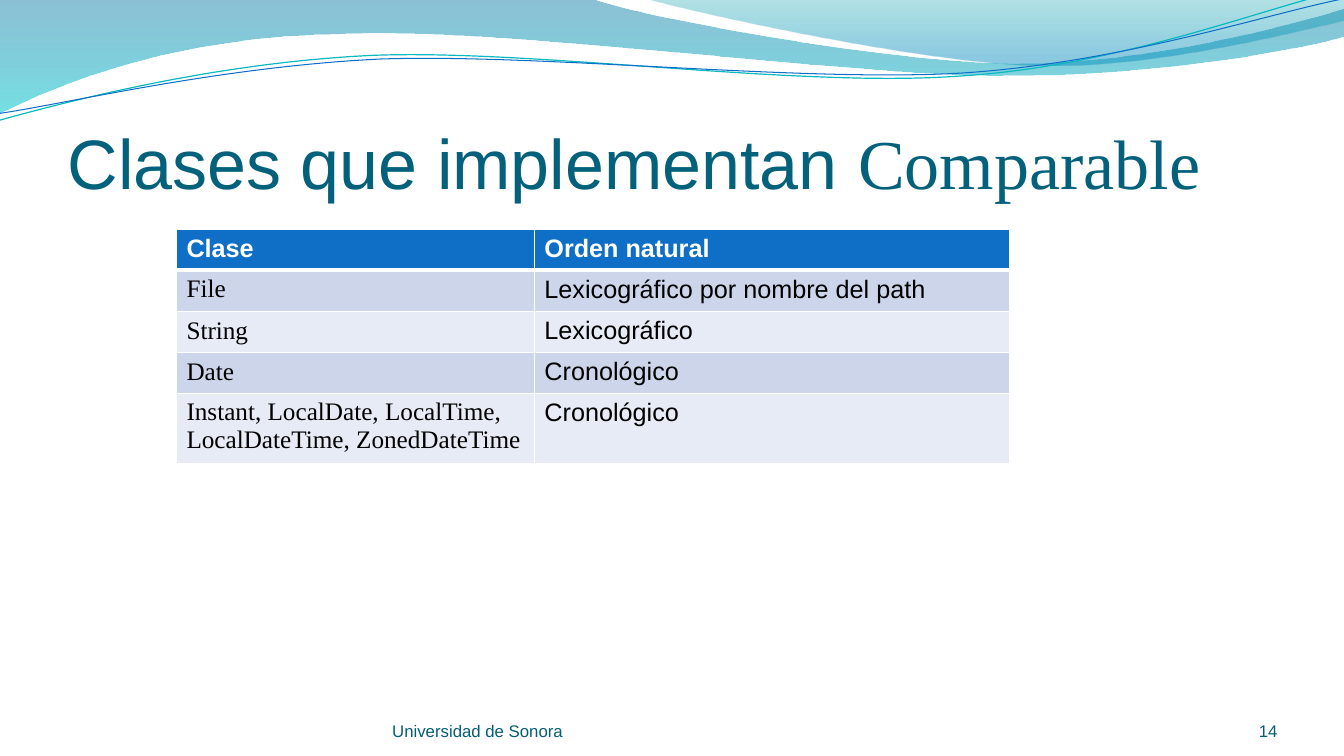
from lxml.etree import SubElement
from pptx import Presentation
from pptx.dml.color import RGBColor
from pptx.enum.text import MSO_ANCHOR, PP_ALIGN
from pptx.oxml.ns import qn
from pptx.util import Pt

PX = 9144
SANS, SERIF = "Arial", "Times New Roman"
HEX = {
    "title": "04617B", "foot": "045D75", "head": "0F6FC6", "white": "FFFFFF",
    "black": "000000", "odd": "CCD5EA", "even": "E7EBF5", "teal": "0AB8BF",
    "deep": "0074A1", "aqua": "00C6CF", "mint": "00A1A9", "sky": "008BBF",
}
ROWS = [
    (40, "Clase", "Orden natural"),
    (41, "File", "Lexicográfico por nombre del path"),
    (41, "String", "Lexicográfico"),
    (40, "Date", "Cronológico"),
    (65, "Instant, LocalDate, LocalTime, LocalDateTime, ZonedDateTime", "Cronológico"),
]
BAND = [
    [(0, 0)], [(587, -1)],
    [(634, 17), (885, 63), (1011, 63)], [(1138, 63), (1278, 26), (1333, 9)],
    [(1335, 36)],
    [(1311, 44), (1160, 76), (994, 75)], [(829, 75), (509, 28), (343, 34)],
    [(172, 36), (61, 83), (-1, 113)],
    [(0, 0)],
]
CREST = [
    [(639, -1)],
    [(679, 11), (909, 62), (1025, 65)], [(1141, 69), (1282, 32), (1333, 21)],
    [(1333, 0)], [(639, -1)],
]
TEAL = [
    [(-3, 88)],
    [(63, 73), (211, 41), (369, 41)], [(528, 42), (788, 93), (949, 89)],
    [(1109, 87), (1254, 36), (1333, 22)],
]
BLUE = [
    [(-2, 81)],
    [(62, 75), (218, 45), (378, 45)], [(537, 47), (795, 88), (954, 86)],
    [(1114, 83), (1256, 42), (1336, 30)],
]


def color(name):
    """Return the named colour."""
    return RGBColor.from_string(HEX[name])


def outline(slide, parts, close):
    """Draw a freeform whose three-point parts are cubic curves."""
    dots = [dot for part in parts for dot in part]
    pen = slide.shapes.build_freeform(*dots[0], scale=PX)
    pen.add_line_segments(dots[1:], close=close)
    shape = pen.convert_to_shape()
    shape.shadow.inherit = False
    lines = iter(list(shape.element.iter(qn("a:lnTo"))))
    for part in parts[1:]:
        group = [next(lines) for _ in part]
        if len(group) == 3:
            group[0].tag
            bend = group[0].makeelement(qn("a:cubicBezTo"))
            group[0].addprevious(bend)
            for line in group:
                bend.append(line[0])
                line.getparent().remove(line)
    return shape


def wave(slide, parts, stops):
    """Draw a closed wave with a see-through gradient."""
    shape = outline(slide, parts, True)
    shape.line.fill.background()
    shape.fill.gradient()
    shape.fill.gradient_angle = 270
    for stop, (place, name, _) in zip(shape.fill.gradient_stops, stops):
        stop.position = place
        stop.color.rgb = color(name)
    for node, (_, _, alpha) in zip(shape.element.iter(qn("a:srgbClr")), stops):
        SubElement(node, qn("a:alpha")).set("val", str(alpha * 1000))


def curve(slide, parts, name, width):
    """Draw an open curved line with a slight tilt."""
    shape = outline(slide, parts, False)
    shape.rotation = 357.3
    shape.fill.background()
    shape.line.color.rgb = color(name)
    shape.line.width = Pt(width)


def write(frame, text, size=18, font=SANS, ink="black", bold=False, align=PP_ALIGN.LEFT):
    """Add a formatted run to the first paragraph of a frame."""
    para = frame.paragraphs[0]
    para.alignment = align
    run = para.add_run()
    run.text = text
    run.font.size = Pt(size)
    run.font.name = font
    run.font.bold = bold
    run.font.color.rgb = color(ink)


def box(slide, left, top, width, height, inset=0):
    """Add a bottom-anchored text box and return its frame."""
    frame = slide.shapes.add_textbox(*(n * PX for n in (left, top, width, height))).text_frame
    frame.word_wrap = True
    frame.vertical_anchor = MSO_ANCHOR.BOTTOM
    frame.margin_left = frame.margin_right = frame.margin_bottom = 0
    frame.margin_top = inset * PX
    return frame


def border(cell, widths):
    """Give a cell white borders of the given widths in points."""
    for side, width in widths.items():
        line = SubElement(cell._tc.get_or_add_tcPr(), qn(f"a:ln{side}"), w=str(Pt(width)))
        fill = SubElement(line, qn("a:solidFill"))
        SubElement(fill, qn("a:srgbClr"), val=HEX["white"])


def grid(slide, left, top, widths):
    """Add the table of classes and their natural order."""
    area = (left, top, sum(widths), sum(row[0] for row in ROWS))
    table = slide.shapes.add_table(len(ROWS), len(widths), *(n * PX for n in area)).table
    for col, width in zip(table.columns, widths):
        col.width = width * PX
    for r, (height, *texts) in enumerate(ROWS):
        table.rows[r].height = height * PX
        for c, text in enumerate(texts):
            cell = table.cell(r, c)
            if r == 0:
                border(cell, {"L": 1, "R": 1, "T": 1, "B": 3})
            cell.fill.solid()
            cell.fill.fore_color.rgb = color("head" if r == 0 else "odd" if r % 2 else "even")
            write(cell.text_frame, text, font=SERIF if r and c == 0 else SANS,
                  ink="black" if r else "white", bold=r == 0)


def main():
    """Build the slide and save it."""
    deck = Presentation()
    deck.slide_width, deck.slide_height = 1333 * PX, 750 * PX
    slide = deck.slides.add_slide(deck.slide_layouts[6])
    wave(slide, BAND, [(0, "deep", 45), (1, "aqua", 55)])
    wave(slide, CREST, [(0, "mint", 30), (0.8, "sky", 45)])
    curve(slide, TEAL, "teal", 0.85)
    curve(slide, BLUE, "head", 0.75)
    title = box(slide, 67, 77, 1200, 125, inset=5)
    write(title, "Clases que implementan ", size=50, ink="title")
    write(title, "Comparable", size=50, font=SERIF, ink="title")
    grid(slide, 175, 228, (355, 471))
    write(box(slide, 389, 695, 489, 40), "Universidad de Sonora", size=12, ink="foot")
    write(box(slide, 1156, 695, 111, 40), "14", size=12, ink="foot", align=PP_ALIGN.RIGHT)
    deck.save("out.pptx")


if __name__ == "__main__":
    main()
